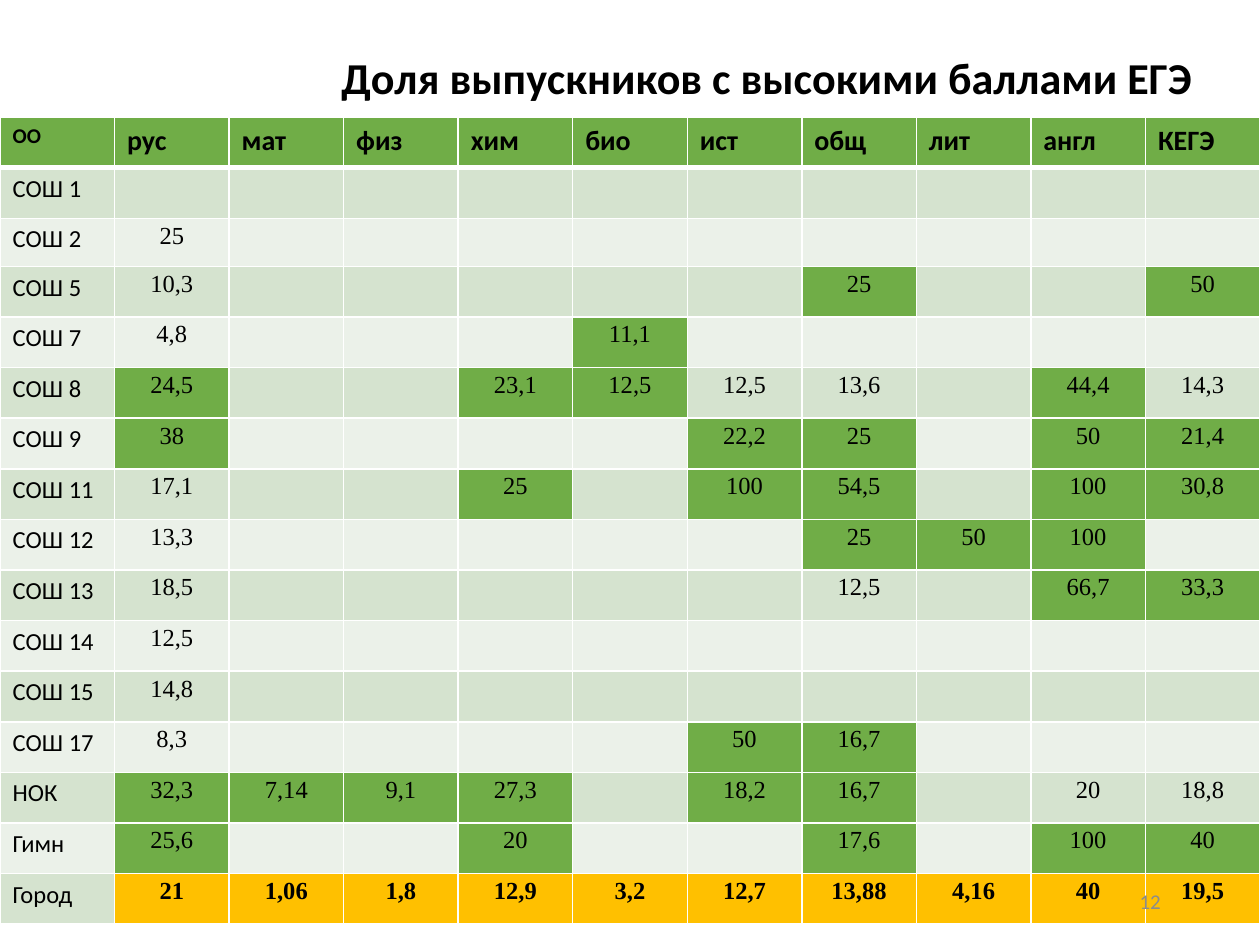
from lxml.etree import SubElement
from pptx import Presentation
from pptx.dml.color import RGBColor
from pptx.enum.text import MSO_ANCHOR, MSO_AUTO_SIZE, PP_ALIGN
from pptx.oxml.ns import qn
from pptx.util import Cm, Pt

BLACK = RGBColor(0x00, 0x00, 0x00)
WHITE = RGBColor(0xFF, 0xFF, 0xFF)
GRAY = RGBColor(0x8C, 0x8C, 0x8C)
GREEN = RGBColor(0x70, 0xAD, 0x47)
AMBER = RGBColor(0xFF, 0xC0, 0x00)
BANDS = (RGBColor(0xEB, 0xF1, 0xE9), RGBColor(0xD5, 0xE3, 0xCF))

LABEL_FONT = "Calibri"
VALUE_FONT = "Times New Roman"

SUBJECTS = ["рус", "мат", "физ", "хим", "био", "ист", "общ", "лит", "англ", "КЕГЭ"]

# Scores by row; subjects without a value are left out
SCHOOLS = {
    "СОШ 1": {},
    "СОШ 2": {"рус": "25"},
    "СОШ 5": {"рус": "10,3", "общ": "25", "КЕГЭ": "50"},
    "СОШ 7": {"рус": "4,8", "био": "11,1"},
    "СОШ 8": {"рус": "24,5", "хим": "23,1", "био": "12,5", "ист": "12,5",
              "общ": "13,6", "англ": "44,4", "КЕГЭ": "14,3"},
    "СОШ 9": {"рус": "38", "ист": "22,2", "общ": "25", "англ": "50", "КЕГЭ": "21,4"},
    "СОШ 11": {"рус": "17,1", "хим": "25", "ист": "100", "общ": "54,5",
               "англ": "100", "КЕГЭ": "30,8"},
    "СОШ 12": {"рус": "13,3", "общ": "25", "лит": "50", "англ": "100"},
    "СОШ 13": {"рус": "18,5", "общ": "12,5", "англ": "66,7", "КЕГЭ": "33,3"},
    "СОШ 14": {"рус": "12,5"},
    "СОШ 15": {"рус": "14,8"},
    "СОШ 17": {"рус": "8,3", "ист": "50", "общ": "16,7"},
    "НОК": {"рус": "32,3", "мат": "7,14", "физ": "9,1", "хим": "27,3",
            "ист": "18,2", "общ": "16,7", "англ": "20", "КЕГЭ": "18,8"},
    "Гимн": {"рус": "25,6", "хим": "20", "общ": "17,6", "англ": "100", "КЕГЭ": "40"},
}
CITY = dict(zip(SUBJECTS, ["21", "1,06", "1,8", "12,9", "3,2", "12,7",
                           "13,88", "4,16", "40", "19,5"]))
# Cells that keep the band colour
UNMARKED = {("СОШ 2", "рус")}


def number(text):
    return float(text.replace(",", "."))


def write(frame, text, size, font=LABEL_FONT, color=BLACK, bold=False,
          align=PP_ALIGN.LEFT, spacing=None):
    frame.text = text
    paragraph = frame.paragraphs[0]
    paragraph.alignment = align
    paragraph.line_spacing = spacing
    for run in paragraph.runs:
        run.font.name = font
        run.font.size = Pt(size)
        run.font.bold = bold
        run.font.color.rgb = color


def set_borders(cell, top=1, bottom=1):
    properties = cell._tc.get_or_add_tcPr()
    for side, points in (("L", 1), ("R", 1), ("T", top), ("B", bottom)):
        line = SubElement(properties, qn(f"a:ln{side}"), w=str(Pt(points)))
        fill = SubElement(line, qn("a:solidFill"))
        SubElement(fill, qn("a:srgbClr"), val=str(WHITE))


def fill_cell(cell, color):
    cell.fill.solid()
    cell.fill.fore_color.rgb = color


def write_value(cell, text, bold=False):
    cell.margin_left = cell.margin_right = Cm(0.19)
    cell.margin_top = cell.margin_bottom = 0
    if text:
        write(cell.text_frame, text, 14, VALUE_FONT, bold=bold,
              align=PP_ALIGN.CENTER, spacing=1.15)


def add_title(slide):
    title = slide.shapes.title
    title.left, title.top, title.width, title.height = Cm(6.05), Cm(1.02), Cm(19.02), Cm(1.19)
    frame = title.text_frame
    frame.auto_size = MSO_AUTO_SIZE.NONE
    frame.vertical_anchor = MSO_ANCHOR.MIDDLE
    write(frame, "Доля выпускников с высокими баллами ЕГЭ ", 25.2, bold=True,
          align=PP_ALIGN.CENTER, spacing=0.9)


def add_scores_table(slide):
    rows = [*SCHOOLS.items(), ("Город", CITY)]
    table = slide.shapes.add_table(len(rows) + 1, len(SUBJECTS) + 1, 0, Cm(2.36),
                                   Cm(25.4), Cm(16.3)).table
    table.horz_banding = False
    for row in table.rows:
        row.height = Cm(1.02)
    table.rows[2].height = Cm(0.97)

    # Header row
    for column, heading in enumerate(["ОО", *SUBJECTS]):
        cell = table.cell(0, column)
        set_borders(cell, bottom=3)
        fill_cell(cell, GREEN)
        write(cell.text_frame, heading, 16 if column else 12, bold=True)

    # Body rows; values above the last row are green
    for index, (school, scores) in enumerate(rows, start=1):
        is_city = scores is CITY
        top = 3 if index == 1 else 1
        name_cell = table.cell(index, 0)
        set_borders(name_cell, top=top)
        fill_cell(name_cell, BANDS[index % 2])
        write(name_cell.text_frame, school, 14)
        for column, subject in enumerate(SUBJECTS, start=1):
            cell = table.cell(index, column)
            score = scores.get(subject)
            color = BANDS[index % 2]
            if is_city:
                color = AMBER
            elif (score and number(score) > number(CITY[subject])
                  and (school, subject) not in UNMARKED):
                color = GREEN
            set_borders(cell, top=top)
            fill_cell(cell, color)
            write_value(cell, score, bold=is_city)


def add_page_number(slide):
    page = slide.shapes.add_textbox(Cm(17.93), Cm(17.65), Cm(5.72), Cm(1.02))
    frame = page.text_frame
    frame.word_wrap = True
    frame.vertical_anchor = MSO_ANCHOR.MIDDLE
    write(frame, "12", 12, color=GRAY, align=PP_ALIGN.RIGHT)


def main():
    presentation = Presentation()
    presentation.slide_width = Cm(25.4)
    presentation.slide_height = Cm(19.05)
    slide = presentation.slides.add_slide(presentation.slide_layouts[5])
    add_title(slide)
    add_scores_table(slide)
    add_page_number(slide)
    presentation.save("out.pptx")


if __name__ == "__main__":
    main()
